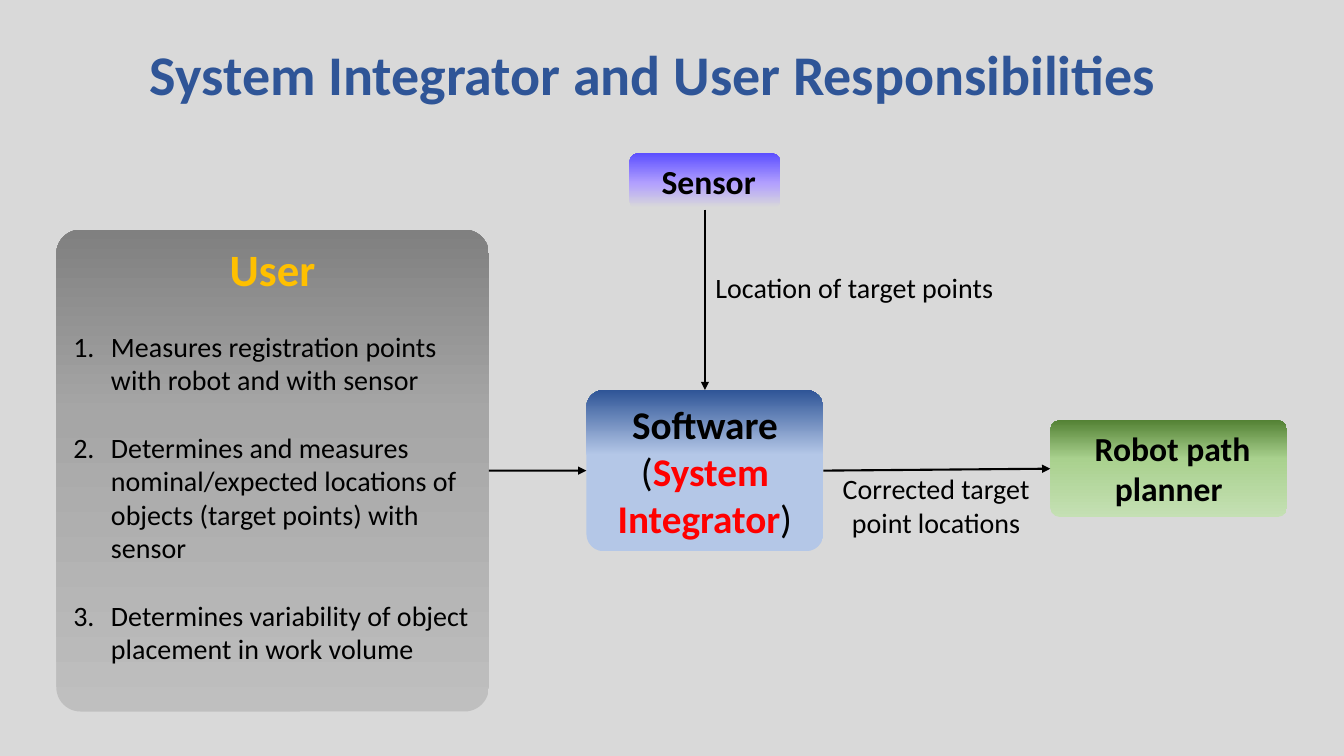
"""Build a slide on the responsibilities of system integrator and user."""
from dataclasses import dataclass

from lxml.etree import SubElement
from pptx import Presentation
from pptx.dml.color import RGBColor
from pptx.enum.shapes import MSO_CONNECTOR, MSO_SHAPE
from pptx.enum.text import MSO_ANCHOR, PP_ALIGN
from pptx.oxml.ns import qn
from pptx.util import Cm, Pt


@dataclass(frozen=True)
class Theme:
    font: str = "Calibri"
    background: str = "D9D9D9"
    title: str = "2F5597"
    text: str = "000000"
    user: str = "FFC000"
    integrator: str = "FF0000"
    title_size: int = 40
    user_size: int = 32
    software_size: int = 28
    box_size: int = 24
    body_size: int = 20
    user_fill: tuple = ((0, "BFBFBF"), (62, "A6A6A6"), (100, "808080"))
    software_fill: tuple = ((0, "B4C7E7"), (60, "B4C7E7"), (100, "2F5597"))
    robot_fill: tuple = ((0, "C5E0B4"), (60, "A9D18E"), (100, "548235"))
    sensor_fill: tuple = ((3, "D9D9D9"), (46, "B2A0FE"), (100, "5C4FFF"))


def format_paragraph(para, size, color, bold, align):
    """Give a paragraph its alignment and all its spans one font."""
    para.alignment = align
    for span in para.runs:
        span.font.name = theme.font
        span.font.size = Pt(size)
        span.font.bold = bold
        span.font.color.rgb = RGBColor.from_string(color)


theme = Theme()
deck = Presentation()
deck.slide_width, deck.slide_height = Cm(33.87), Cm(19.05)
page = deck.slides.add_slide(deck.slide_layouts[6])
page.background.fill.solid()
page.background.fill.fore_color.rgb = RGBColor.from_string(theme.background)

box_rows = [
    ("User", (1.42, 5.79, 10.9, 12.14), 0.056, theme.user_fill, theme.user_size, theme.user),
    ("Software\n(", (14.78, 9.83, 5.97, 4.06), 0.106, theme.software_fill, theme.software_size, theme.text),
    (" Robot path planner", (26.47, 10.59, 5.97, 2.44), 0.101, theme.robot_fill, theme.box_size, theme.text),
    (" Sensor", (15.86, 3.86, 3.81, 1.42), 0.167, theme.sensor_fill, theme.box_size, theme.text),
]
boxes = []
for text, place, rounding, stops, size, color in box_rows:
    box = page.shapes.add_shape(MSO_SHAPE.ROUNDED_RECTANGLE, *map(Cm, place))
    box.adjustments[0] = rounding
    box.shadow.inherit = False
    box.line.fill.background()
    box.fill.gradient()
    box.fill.gradient_angle = 90
    stop_list = box.element.spPr.find(".//" + qn("a:gsLst"))
    stop_list.clear()
    for position, stop_color in stops:
        stop = SubElement(stop_list, qn("a:gs"), pos=str(position * 1000))
        SubElement(stop, qn("a:srgbClr"), val=stop_color)
    box.text_frame.text = text
    box.text_frame.word_wrap = True
    box.text_frame.vertical_anchor = MSO_ANCHOR.TOP
    for para in box.text_frame.paragraphs:
        format_paragraph(para, size, color, True, PP_ALIGN.CENTER)
    boxes.append(box)
user, software, robot, sensor = boxes

for duty in (
    "Measures registration points with robot and with sensor",
    "Determines and measures nominal/expected locations of objects (target points) with sensor",
    "Determines variability of object placement in work volume",
):
    para = user.text_frame.add_paragraph()
    para.text = duty
    para.space_before = Pt(24)
    format_paragraph(para, theme.body_size, theme.text, False, PP_ALIGN.LEFT)
    properties = para._p.get_or_add_pPr()
    properties.set("marL", str(Cm(0.95)))
    properties.set("indent", str(-Cm(0.95)))
    SubElement(properties, qn("a:buFont"), typeface="+mj-lt")
    SubElement(properties, qn("a:buAutoNum"), type="arabicPeriod")

role = software.text_frame.paragraphs[1]
for text in ("System Integrator", ")"):
    role.add_run().text = text
format_paragraph(role, theme.software_size, theme.text, False, PP_ALIGN.CENTER)
role.runs[1].font.bold = True
role.runs[1].font.color.rgb = RGBColor.from_string(theme.integrator)

for start, start_side, end, end_side in (
    (sensor, 2, software, 0),
    (user, 3, software, 1),
    (software, 3, robot, 1),
):
    arrow = page.shapes.add_connector(MSO_CONNECTOR.STRAIGHT, 0, 0, 0, 0)
    arrow.begin_connect(start, start_side)
    arrow.end_connect(end, end_side)
    arrow.line.width = Pt(1.5)
    arrow.line.color.rgb = RGBColor.from_string(theme.text)
    SubElement(arrow.line._get_or_add_ln(), qn("a:tailEnd"), type="triangle")
    SubElement(arrow._element.spPr, qn("a:effectLst"))

for text, place, size, color, bold, align in (
    ("System Integrator and User Responsibilities", (3.53, 0.86, 26.82, 1.96),
     theme.title_size, theme.title, True, PP_ALIGN.LEFT),
    ("Location of target points", (17.78, 6.68, 7.52, 1.12),
     theme.body_size, theme.text, False, PP_ALIGN.LEFT),
    ("Corrected target point locations", (20.96, 11.76, 5.26, 1.96),
     theme.body_size, theme.text, False, PP_ALIGN.CENTER),
):
    label = page.shapes.add_textbox(*map(Cm, place))
    label.text_frame.text = text
    label.text_frame.word_wrap = True
    format_paragraph(label.text_frame.paragraphs[0], size, color, bold, align)

deck.save("out.pptx")
